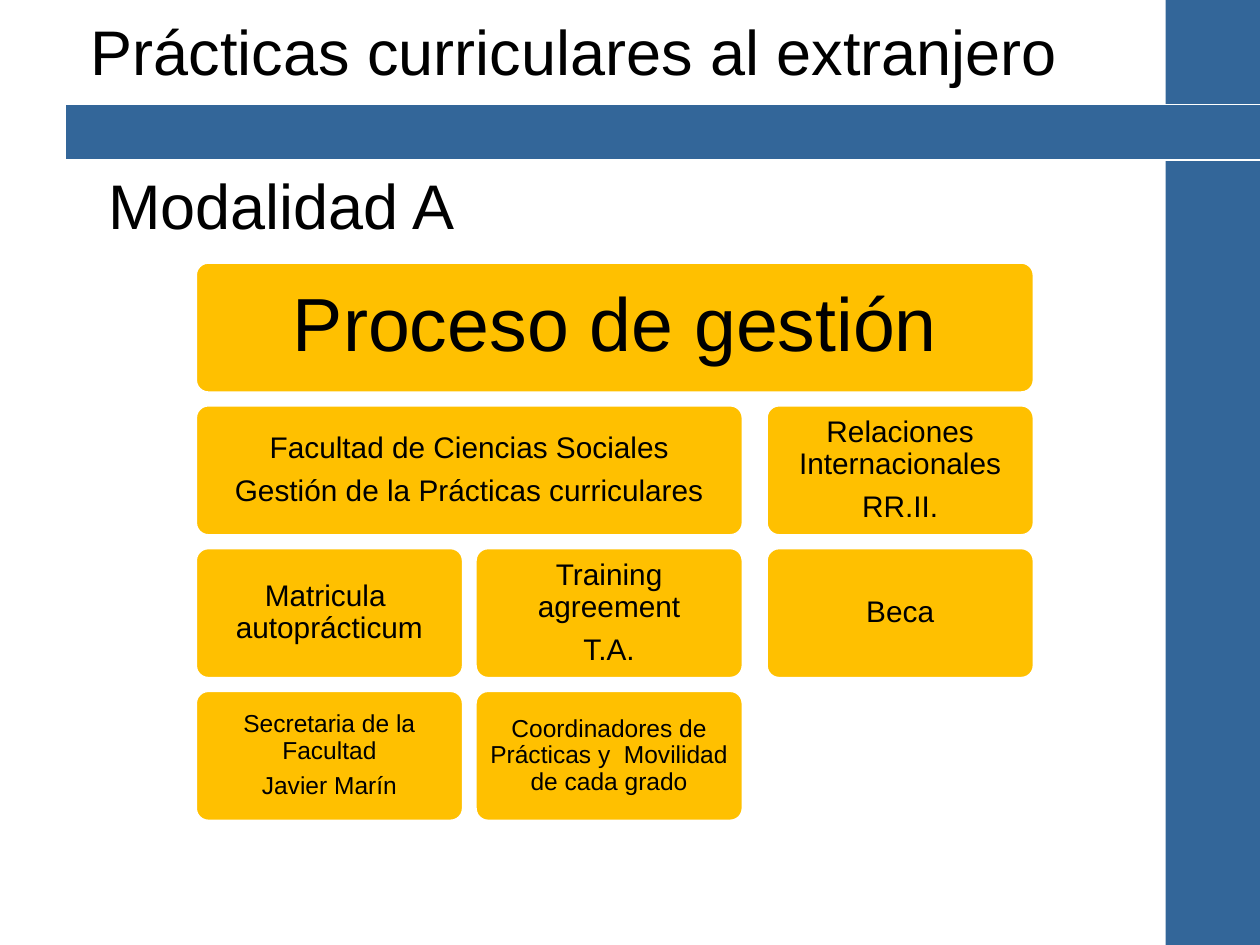
from pptx import Presentation
from pptx.dml.color import RGBColor
from pptx.enum.shapes import MSO_SHAPE
from pptx.enum.text import MSO_ANCHOR, PP_ALIGN
from pptx.util import Inches, Pt

RECT, ROUNDED = MSO_SHAPE.RECTANGLE, MSO_SHAPE.ROUNDED_RECTANGLE
TOP, MIDDLE = MSO_ANCHOR.TOP, MSO_ANCHOR.MIDDLE
LEFT, CENTER = PP_ALIGN.LEFT, PP_ALIGN.CENTER

COLORS = {"band": "336699", "box": "FFC000", "edge": "FFFFFF", "text": "000000"}
FONT = "Arial"
TITLE_LINES = ["Prácticas curriculares al extranjero", "Modalidad A"]

# Grid of the process diagram
COLUMN_LEFTS = [1.55, 3.77, 6.08]
COLUMN_WIDTH = 2.13
FIRST_ROW, ROW_STEP, ROW_HEIGHT = 2.08, 1.133, 1.04

# row, first column, last column, text size, inset, lines
PROCESS_BOXES = [
    (0, 0, 2, 43, 0.18, ["Proceso de gestión"]),
    (1, 0, 1, 17, 0.07, ["Facultad de Ciencias Sociales",
                         "Gestión de la Prácticas curriculares"]),
    (2, 0, 0, 17, 0.07, ["Matricula  autoprácticum"]),
    (3, 0, 0, 14, 0.06, ["Secretaria de la Facultad", "Javier Marín"]),
    (2, 1, 1, 17, 0.07, ["Training agreement", "T.A."]),
    (3, 1, 1, 14, 0.06, ["Coordinadores de Prácticas y  Movilidad de cada grado"]),
    (1, 2, 2, 17, 0.07, ["Relaciones Internacionales", "RR.II."]),
    (2, 2, 2, 17, 0.07, ["Beca"]),
]


def color(name):
    return RGBColor.from_string(COLORS[name])


def write_lines(frame, lines, size, align, line_spacing, space_before):
    frame.word_wrap = True
    for index, line in enumerate(lines):
        paragraph = frame.paragraphs[0] if index == 0 else frame.add_paragraph()
        paragraph.text = line
        paragraph.alignment = align
        paragraph.line_spacing = line_spacing
        paragraph.space_before = Pt(space_before if index else 0)
        paragraph.font.name = FONT
        paragraph.font.size = Pt(size)
        paragraph.font.color.rgb = color("text")


def add_block(slide, preset, left, top, width, height, fill, line_width=0):
    block = slide.shapes.add_shape(
        preset, Inches(left), Inches(top), Inches(width), Inches(height))
    block.shadow.inherit = False
    block.fill.solid()
    block.fill.fore_color.rgb = color(fill)
    if line_width:
        block.line.color.rgb = color("edge")
        block.line.width = Pt(line_width)
    else:
        block.line.fill.background()
    return block


def add_process_box(slide, row, first, last, size, inset, lines):
    left = COLUMN_LEFTS[first]
    width = COLUMN_LEFTS[last] + COLUMN_WIDTH - left
    box = add_block(slide, ROUNDED, left, FIRST_ROW + row * ROW_STEP,
                    width, ROW_HEIGHT, "box", 2)
    box.adjustments[0] = 0.1
    frame = box.text_frame
    frame.vertical_anchor = MIDDLE
    frame.margin_left = frame.margin_right = Inches(inset)
    frame.margin_top = frame.margin_bottom = Inches(inset)
    write_lines(frame, lines, size, CENTER, 0.9, size * 0.35)


def place_title(slide):
    title = slide.shapes.title
    title.left, title.top = Inches(0.62), Inches(0.05)
    title.width, title.height = Inches(8.29), Inches(1.92)
    title.text_frame.vertical_anchor = TOP
    write_lines(title.text_frame, TITLE_LINES, 36, LEFT, 1.0, 45)
    # Indent the subtitle
    subtitle = title.text_frame.paragraphs[1]
    subtitle._p.get_or_add_pPr().set("marL", str(Inches(0.14)))


def main():
    deck = Presentation()
    deck.slide_width, deck.slide_height = Inches(10), Inches(7.5)
    slide = deck.slides.add_slide(deck.slide_layouts[5])

    # Side and header bands
    add_block(slide, RECT, 9.25, 0, 0.75, 7.5, "band")
    add_block(slide, RECT, 0.52, 0.83, 9.9, 0.44, "band", 0.75)

    place_title(slide)

    # Process diagram
    for process_box in PROCESS_BOXES:
        add_process_box(slide, *process_box)

    deck.save("out.pptx")


if __name__ == "__main__":
    main()
